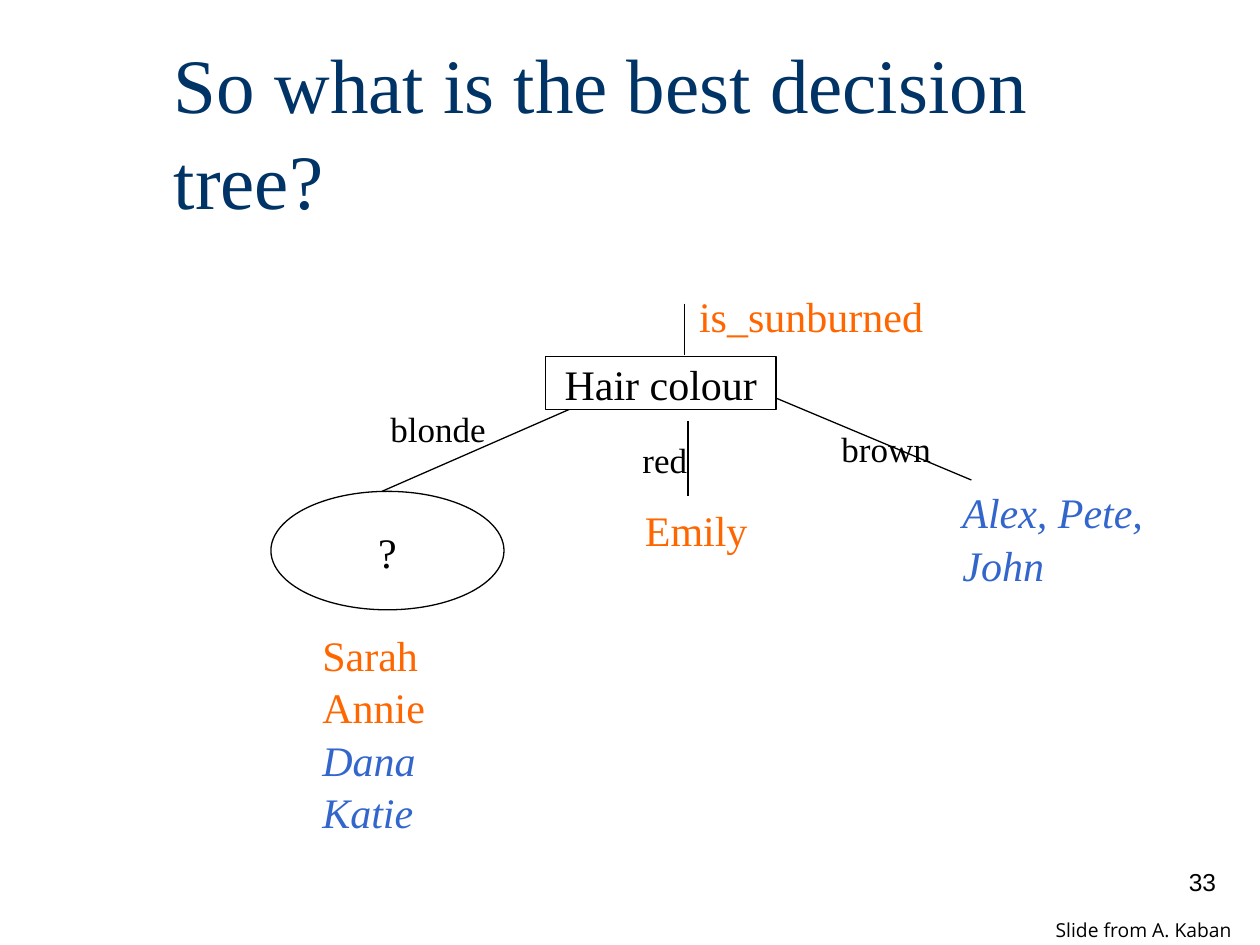
from lxml.etree import SubElement
from pptx import Presentation
from pptx.dml.color import RGBColor
from pptx.enum.shapes import MSO_CONNECTOR, MSO_SHAPE
from pptx.enum.text import MSO_ANCHOR, PP_ALIGN
from pptx.oxml.ns import qn
from pptx.util import Inches, Pt

BLACK, WHITE, NAVY = "000000", "FFFFFF", "003366"
ORANGE, BLUE = "FF6600", "3366CC"
SERIF = "Times New Roman"

TITLE = "So what is the best decision tree?"
TITLE_AT = (1.28, 0.35, 7.95, 1.35)

# start x, start y, end x, end y
BRANCHES = [
    (5.43, 2.41, 5.43, 2.82),
    (4.7, 3.17, 3.03, 3.9),
    (5.46, 3.34, 5.46, 3.94),
    (6.16, 3.16, 7.71, 3.81),
]

# preset, text, place, fill
NODES = [
    (MSO_SHAPE.OVAL, "?", (2.15, 3.9, 1.85, 0.94), None),
    (MSO_SHAPE.RECTANGLE, "Hair colour", (4.33, 2.83, 1.83, 0.42), WHITE),
]

# runs of (text, colour, italic), place, format
TEXTS = [
    ([("is_sunburned", ORANGE, False)], (5.45, 2.24, 3.17, 0.5), {}),
    ([("Alex, Pete, John", BLUE, True)], (7.54, 3.8, 1.83, 0.9), {}),
    ([("Emily", ORANGE, False)], (5.02, 3.94, 1.1, 0.5), {}),
    ([("Sarah Annie ", ORANGE, False), ("Dana Katie", BLUE, True)],
     (2.46, 4.93, 1.15, 1.7), {}),
    ([("brown", BLACK, False)], (6.58, 3.33, 1, 0.43), {"size": 20}),
    ([("blonde", BLACK, False)], (3, 3.17, 1, 0.43), {"size": 20}),
    ([("red", BLACK, False)], (5, 3.42, 1, 0.43), {"size": 20}),
    ([("33", BLACK, False)], (7.67, 6.83, 2.08, 0.5),
     {"size": 14, "font": "Arial", "align": PP_ALIGN.RIGHT, "spacing": 1}),
    ([("Slide from A. Kaban", BLACK, False)], (8.28, 7.24, 1.68, 0.29),
     {"size": 11, "font": "Open Sans", "wrap": False, "spacing": 1}),
]


def colour(value):
    return RGBColor.from_string(value)


def inches(values):
    return [Inches(value) for value in values]


def write(shape, runs, size=24, font=SERIF, align=PP_ALIGN.LEFT,
          anchor=MSO_ANCHOR.TOP, wrap=True, spacing=1.04):
    frame = shape.text_frame
    frame.word_wrap = wrap
    frame.vertical_anchor = anchor
    paragraph = frame.paragraphs[0]
    paragraph.alignment = align
    paragraph.line_spacing = spacing
    for text, run_colour, italic in runs:
        run = paragraph.add_run()
        run.text = text
        run.font.name = font
        run.font.size = Pt(size)
        run.font.italic = italic
        run.font.color.rgb = colour(run_colour)


def outline(shape):
    shape.line.color.rgb = colour(BLACK)
    shape.line.width = Pt(0.75)


def add_branch(slide, ends):
    connector = slide.shapes.add_connector(MSO_CONNECTOR.STRAIGHT, *inches(ends))
    outline(connector)
    SubElement(connector._element.spPr, qn("a:effectLst"))


def add_node(slide, preset, text, place, fill):
    shape = slide.shapes.add_shape(preset, *inches(place))
    shape.shadow.inherit = False
    if fill:
        shape.fill.solid()
        shape.fill.fore_color.rgb = colour(fill)
    else:
        shape.fill.background()
    outline(shape)
    write(shape, [(text, BLACK, False)], align=PP_ALIGN.CENTER,
          anchor=MSO_ANCHOR.MIDDLE, wrap=False)


def main():
    presentation = Presentation()
    presentation.slide_width, presentation.slide_height = inches((10, 7.5))
    slide = presentation.slides.add_slide(presentation.slide_layouts[5])

    title = slide.shapes.title
    title.left, title.top, title.width, title.height = inches(TITLE_AT)
    write(title, [(TITLE, NAVY, False)], size=44, anchor=MSO_ANCHOR.MIDDLE)

    for ends in BRANCHES:
        add_branch(slide, ends)
    for node in NODES:
        add_node(slide, *node)
    for runs, place, text_format in TEXTS:
        write(slide.shapes.add_textbox(*inches(place)), runs, **text_format)

    presentation.save("out.pptx")


if __name__ == "__main__":
    main()
